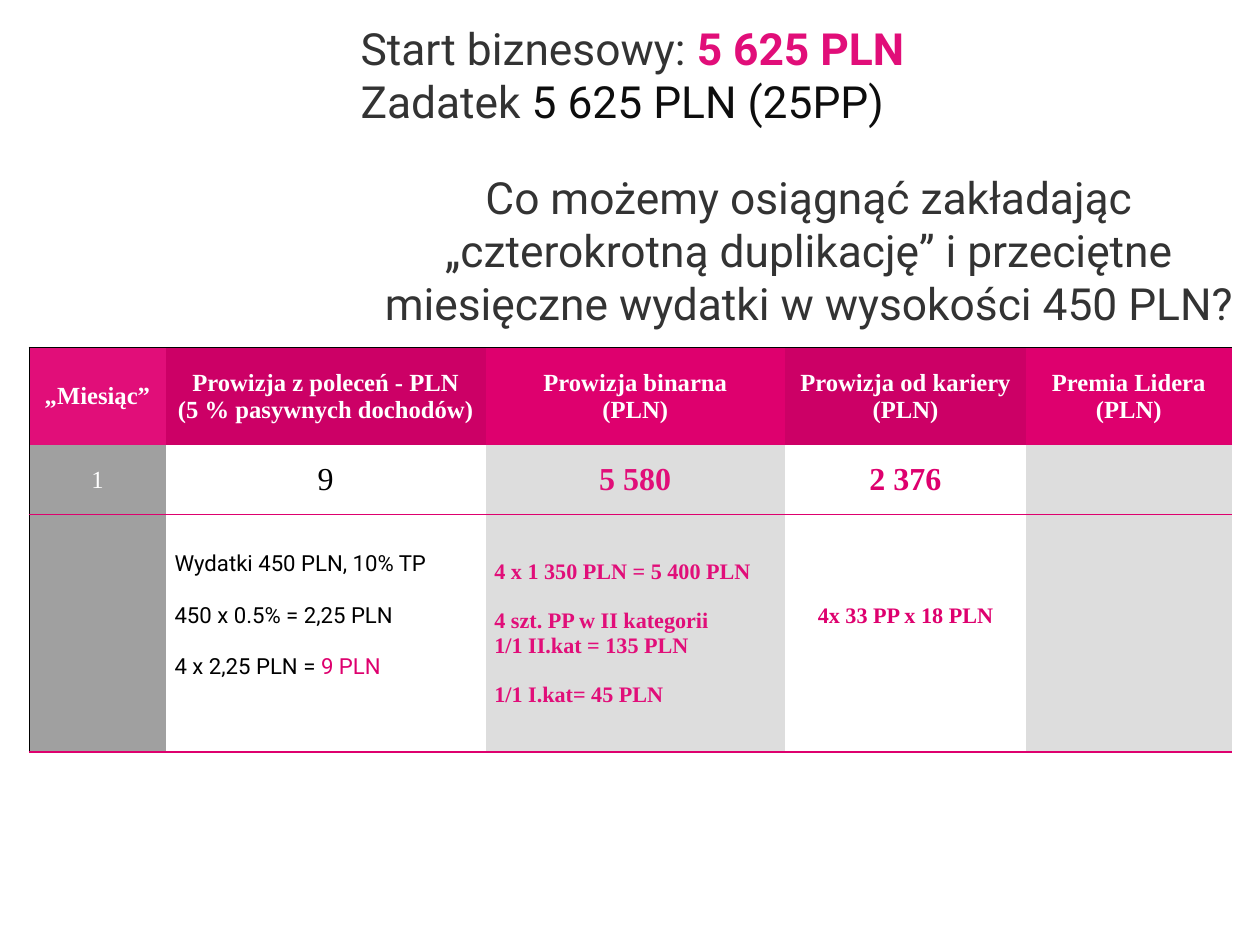
from lxml import etree
from pptx import Presentation
from pptx.dml.color import RGBColor
from pptx.enum.text import MSO_ANCHOR as Anchor, MSO_AUTO_SIZE as AutoSize, PP_ALIGN as Align
from pptx.oxml.ns import qn
from pptx.util import Inches, Pt

COLORS = {
    "pink": "E10E79", "magenta": "DE006E", "dark_magenta": "CC0066",
    "label_gray": "A0A0A0", "light_gray": "DDDDDD", "text_gray": "333333",
    "near_black": "0D0D0D", "black": "000000", "white": "FFFFFF",
}
SANS, SERIF = "Roboto", "Times New Roman"
NO_GRID_STYLE = "{2D5ABB26-0587-4C30-8999-92F81FD0307C}"

COLUMN_WIDTHS = [1.54, 3.61, 3.38, 2.72, 2.32]
ROW_HEIGHTS = [1.11, 0.78, 2.68]
HEADERS = [
    ("„Miesiąc”", "pink"),
    ("Prowizja z poleceń - PLN\n(5 % pasywnych dochodów)", "dark_magenta"),
    ("Prowizja binarna\n(PLN)", "magenta"),
    ("Prowizja od kariery\n(PLN)", "dark_magenta"),
    ("Premia Lidera\n(PLN)", "magenta"),
]
BODY_FILLS = ["label_gray", None, "light_gray", None, "light_gray"]
# Text, size, colour and weight for each month total
TOTALS = [
    ("1", 20, "white", False),
    ("9", 26, "black", False),
    ("5 580", 26, "pink", True),
    ("2 376", 26, "magenta", True),
]


def write(paragraph, pieces, size, font, bold=False, align=Align.CENTER, before=0):
    """Fill a paragraph with (text, colour) or (text, colour, bold) pieces."""
    paragraph.alignment = align
    paragraph.space_before = Pt(before)
    for text, color, *weight in pieces:
        for index, line in enumerate(text.split("\n")):
            if index:
                paragraph.add_line_break()
            run = paragraph.add_run()
            run.text = line
            run.font.size = Pt(size)
            run.font.name = font
            run.font.bold = weight[0] if weight else bold
            run.font.color.rgb = RGBColor.from_string(COLORS[color])


def write_lines(cell, lines, font, bold=False):
    """Write left-aligned calculation lines given as (pieces, space before)."""
    for index, (pieces, before) in enumerate(lines):
        frame = cell.text_frame
        paragraph = frame.add_paragraph() if index else frame.paragraphs[0]
        write(paragraph, pieces, 18, font, bold, Align.LEFT, before)


def add_border(cell, side, color, width):
    border = etree.SubElement(cell._tc.get_or_add_tcPr(), qn(f"a:ln{side}"), w=str(Pt(width)))
    fill = etree.SubElement(border, qn("a:solidFill"))
    etree.SubElement(fill, qn("a:srgbClr"), val=COLORS[color])


def style_cell(cell, row, column):
    """Set the borders, fill and anchor that follow from the cell's place."""
    if column == 0:
        add_border(cell, "L", "black", 1)
    if row == 0:
        add_border(cell, "T", "black", 1)
    if row == 2:
        add_border(cell, "T", "magenta", 1.5)
    if row:
        add_border(cell, "B", "magenta", 1.5)
    fill = BODY_FILLS[column] if row else HEADERS[column][1]
    if fill:
        cell.fill.solid()
        cell.fill.fore_color.rgb = RGBColor.from_string(COLORS[fill])
    else:
        cell.fill.background()
    cell.vertical_anchor = Anchor.MIDDLE


def add_heading(slide):
    heading = slide.shapes.title
    heading.left, heading.top = Inches(0.03), Inches(0.41)
    heading.width, heading.height = Inches(14.22), Inches(3.14)
    frame = heading.text_frame
    frame.word_wrap = True
    frame.auto_size = AutoSize.NONE
    frame.vertical_anchor = Anchor.MIDDLE
    frame.margin_left = frame.margin_right = Inches(0.06)
    frame.margin_top = frame.margin_bottom = Inches(0.06)

    # Two amounts share a left edge above the centred question
    start, deposit = frame.paragraphs[0], frame.add_paragraph()
    for amount in (start, deposit):
        amount._p.get_or_add_pPr().set("marL", str(Inches(3.98)))
    write(start, [("Start biznesowy: ", "text_gray"), ("5 625 PLN", "pink", True)],
          36, SANS, align=Align.LEFT)
    write(deposit, [("Zadatek ", "text_gray"), ("5 625 PLN (25PP)", "near_black")],
          36, SANS, align=Align.LEFT)
    question = ("Co możemy osiągnąć zakładając „czterokrotną duplikację” i "
                "przeciętne miesięczne wydatki w wysokości 450 PLN?")
    write(frame.add_paragraph(), [(question, "text_gray")], 36, SANS, before=35)


def add_commission_table(slide):
    frame = slide.shapes.add_table(
        len(ROW_HEIGHTS), len(COLUMN_WIDTHS),
        Inches(0.33), Inches(3.92), Inches(13.57), Inches(4.57))
    table = frame.table
    table.first_row = table.horz_banding = False
    table._tbl.tblPr.find(qn("a:tableStyleId")).text = NO_GRID_STYLE
    for column, width in zip(table.columns, COLUMN_WIDTHS):
        column.width = Inches(width)
    for row, height in zip(table.rows, ROW_HEIGHTS):
        row.height = Inches(height)
    for row in range(len(ROW_HEIGHTS)):
        for column in range(len(COLUMN_WIDTHS)):
            style_cell(table.cell(row, column), row, column)

    # Headers and month totals
    for column, (text, _) in enumerate(HEADERS):
        write(table.cell(0, column).text_frame.paragraphs[0],
              [(text, "white")], 20, SERIF, bold=True)
    for column, (text, size, color, bold) in enumerate(TOTALS):
        write(table.cell(1, column).text_frame.paragraphs[0],
              [(text, color)], size, SERIF, bold)

    # Calculations behind the totals
    referral, binary, career = (table.cell(2, column) for column in (1, 2, 3))
    write_lines(referral, [
        ([("Wydatki 450 PLN, 10% TP", "black")], 0),
        ([("450 x 0.5% = 2,25 PLN", "black")], 21),
        ([("4 x 2,25 PLN = ", "black"), ("9 PLN", "magenta")], 21),
    ], SANS)
    write_lines(binary, [
        ([("4 x 1 350 PLN = 5 400 PLN", "pink")], 0),
        ([("4 szt. PP w II kategorii", "pink")], 20),
        ([("1/1 II.kat = 135 PLN", "pink")], 0),
        ([("1/1 I.kat= 45 PLN", "pink")], 20),
    ], SERIF, bold=True)
    write(career.text_frame.paragraphs[0],
          [("4x 33 PP x 18 PLN", "magenta")], 18, SERIF, bold=True)
    for cell in (referral, career):
        cell.margin_bottom = Inches(0.45)


def main():
    deck = Presentation()
    deck.slide_width, deck.slide_height = Inches(14.22), Inches(10.67)
    slide = deck.slides.add_slide(deck.slide_layouts[5])
    add_heading(slide)
    add_commission_table(slide)
    deck.save("out.pptx")


if __name__ == "__main__":
    main()
